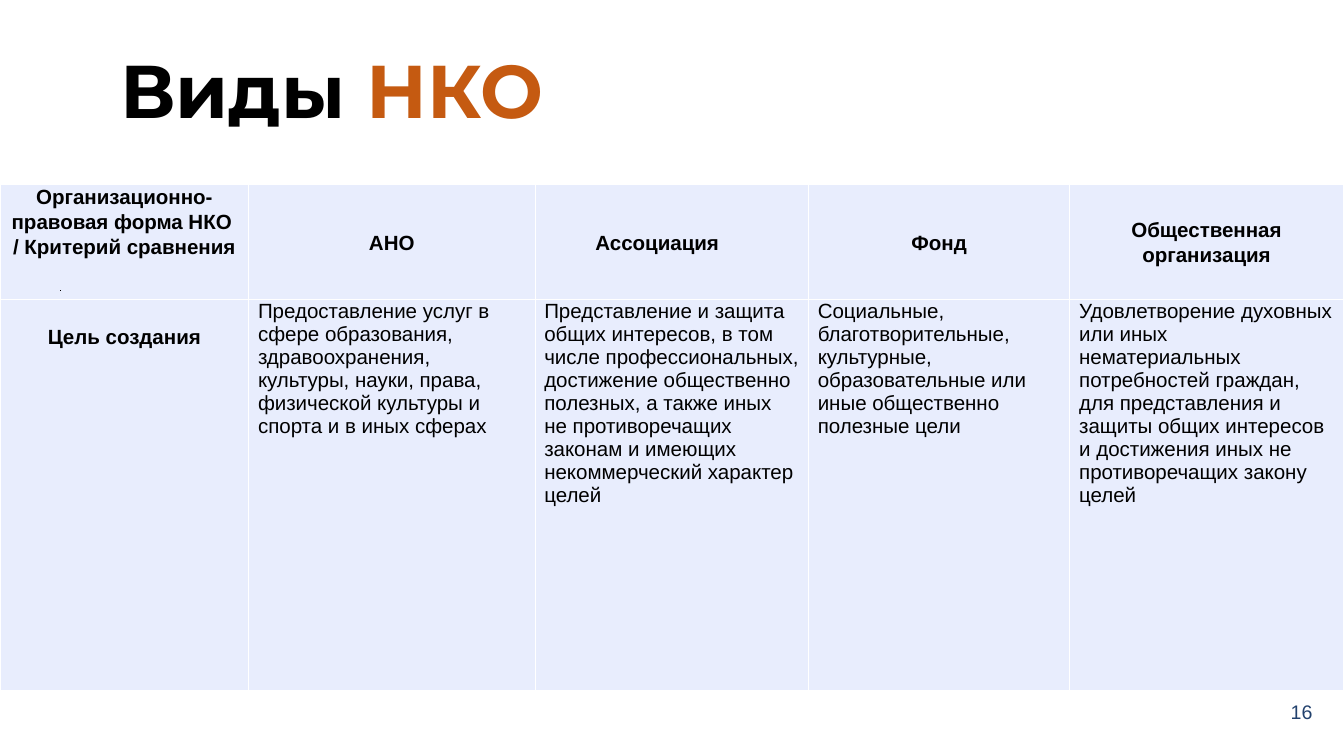
import lxml.etree
import pptx
import pptx.dml.color
import pptx.enum.shapes
import pptx.enum.text
import pptx.oxml
import pptx.oxml.ns
import pptx.util

Inches = pptx.util.Inches
Pt = pptx.util.Pt
ALIGN = pptx.enum.text.PP_ALIGN
ANCHOR = pptx.enum.text.MSO_ANCHOR

COLUMN_WIDTHS = [3.7, 4.26, 4.07, 3.89, 4.07]
ROW_HEIGHTS = [1.71, 5.81]
CRITERION = [("Организационно-правовая форма НКО", {}), (" ", {"size": 20}),
             (" / Критерий сравнения", {})]
FORMS = ["АНО", "Ассоциация", "Фонд", "Общественная организация"]
GOALS = [
    "Предоставление услуг в сфере образования, здравоохранения, культуры, "
    "науки, права, физической культуры и спорта и в иных сферах",
    "Представление и защита общих интересов, в том числе профессиональных, "
    "достижение общественно полезных, а также иных не противоречащих законам "
    "и имеющих некоммерческий характер целей",
    "Социальные, благотворительные, культурные, образовательные или иные "
    "общественно полезные цели",
    "Удовлетворение духовных или иных нематериальных потребностей граждан, "
    "для представления и защиты общих интересов и достижения иных не "
    "противоречащих закону целей",
]


def rgb(value):
    """Turn a hex string into a colour."""
    return pptx.dml.color.RGBColor.from_string(value)


def write_text(frame, runs, size=22, font="Arial", color="000000", bold=False,
               align=ALIGN.LEFT, spacing=None):
    """Write one paragraph of (text, overrides) runs into a text frame."""
    paragraph = frame.paragraphs[0]
    paragraph.alignment = align
    if spacing:
        paragraph.line_spacing = spacing
    for text, overrides in runs:
        run = paragraph.add_run()
        run.text = text
        run.font.size = Pt(overrides.get("size", size))
        run.font.name = font
        run.font.bold = bold
        run.font.color.rgb = rgb(overrides.get("color", color))


def add_text_box(slide, left, top, width, height, runs, anchor=ANCHOR.TOP, **style):
    """Add a wrapping text box with even insets."""
    box = slide.shapes.add_textbox(Inches(left), Inches(top), Inches(width), Inches(height))
    frame = box.text_frame
    frame.word_wrap = True
    frame.vertical_anchor = anchor
    frame.margin_left = frame.margin_right = Inches(0.15)
    frame.margin_top = frame.margin_bottom = Inches(0.15)
    write_text(frame, runs, **style)


def add_borders(cell, color="FFFFFF", width=1):
    """Draw all four borders of a table cell."""
    properties = cell._tc.get_or_add_tcPr()
    for side in ("lnL", "lnR", "lnT", "lnB"):
        properties.append(pptx.oxml.parse_xml(
            f'<a:{side} {pptx.oxml.ns.nsdecls("a")} w="{Pt(width)}"><a:solidFill>'
            f'<a:srgbClr val="{color}"/></a:solidFill></a:{side}>'))


def fill_cell(cell, runs, anchor=ANCHOR.TOP, top=0, right=0.14, **style):
    """Format a table cell and write its text."""
    add_borders(cell)
    cell.fill.solid()
    cell.fill.fore_color.rgb = rgb("E8EDFD")
    cell.vertical_anchor = anchor
    cell.margin_left, cell.margin_right = Inches(0.14), Inches(right)
    cell.margin_top, cell.margin_bottom = Inches(top), Inches(0)
    write_text(cell.text_frame, runs, **style)


def add_comparison_table(slide):
    """Add the table that compares the legal forms."""
    table = slide.shapes.add_table(
        len(ROW_HEIGHTS), len(COLUMN_WIDTHS), Inches(0), Inches(2.75),
        Inches(sum(COLUMN_WIDTHS)), Inches(sum(ROW_HEIGHTS))).table
    for column, width in zip(table.columns, COLUMN_WIDTHS):
        column.width = Inches(width)
    for row, height in zip(table.rows, ROW_HEIGHTS):
        row.height = Inches(height)
    heading = {"bold": True, "align": ALIGN.CENTER, "spacing": 1.07}
    fill_cell(table.cell(0, 0), CRITERION, **heading)
    fill_cell(table.cell(1, 0), [("Цель создания", {})], top=0.37, **heading)
    for column, (form, goal) in enumerate(zip(FORMS, GOALS), start=1):
        right = 0.57 if form == "Ассоциация" else 0.14
        fill_cell(table.cell(0, column), [(form, {})], anchor=ANCHOR.MIDDLE,
                  right=right, **heading)
        fill_cell(table.cell(1, column), [(goal, {})])


def add_line(slide, start, end, color, width):
    """Add a straight line without a shadow."""
    line = slide.shapes.add_connector(
        pptx.enum.shapes.MSO_CONNECTOR.STRAIGHT, *map(Inches, start + end))
    line.line.color.rgb = rgb(color)
    line.line.width = Pt(width)
    lxml.etree.SubElement(line._element.spPr, pptx.oxml.ns.qn("a:effectLst"))


def main():
    """Build the slide and save it."""
    deck = pptx.Presentation()
    deck.slide_width, deck.slide_height = Inches(20), Inches(11.25)
    slide = deck.slides.add_slide(deck.slide_layouts[6])
    add_text_box(slide, 1.64, 0.5, 17.92, 7.52,
                 [("Виды ", {}), ("НКО", {"color": "C55A11"})],
                 size=80, font="Montserrat", bold=True)
    add_text_box(slide, 19, 10.27, 0.74, 0.65, [("16", {})], anchor=ANCHOR.MIDDLE,
                 size=21, color="22416D", align=ALIGN.CENTER)
    add_comparison_table(slide)
    add_line(slide, (0.9, 4.33), (0.9, 4.32), "000000", 0.75)
    deck.save("out.pptx")


if __name__ == "__main__":
    main()
